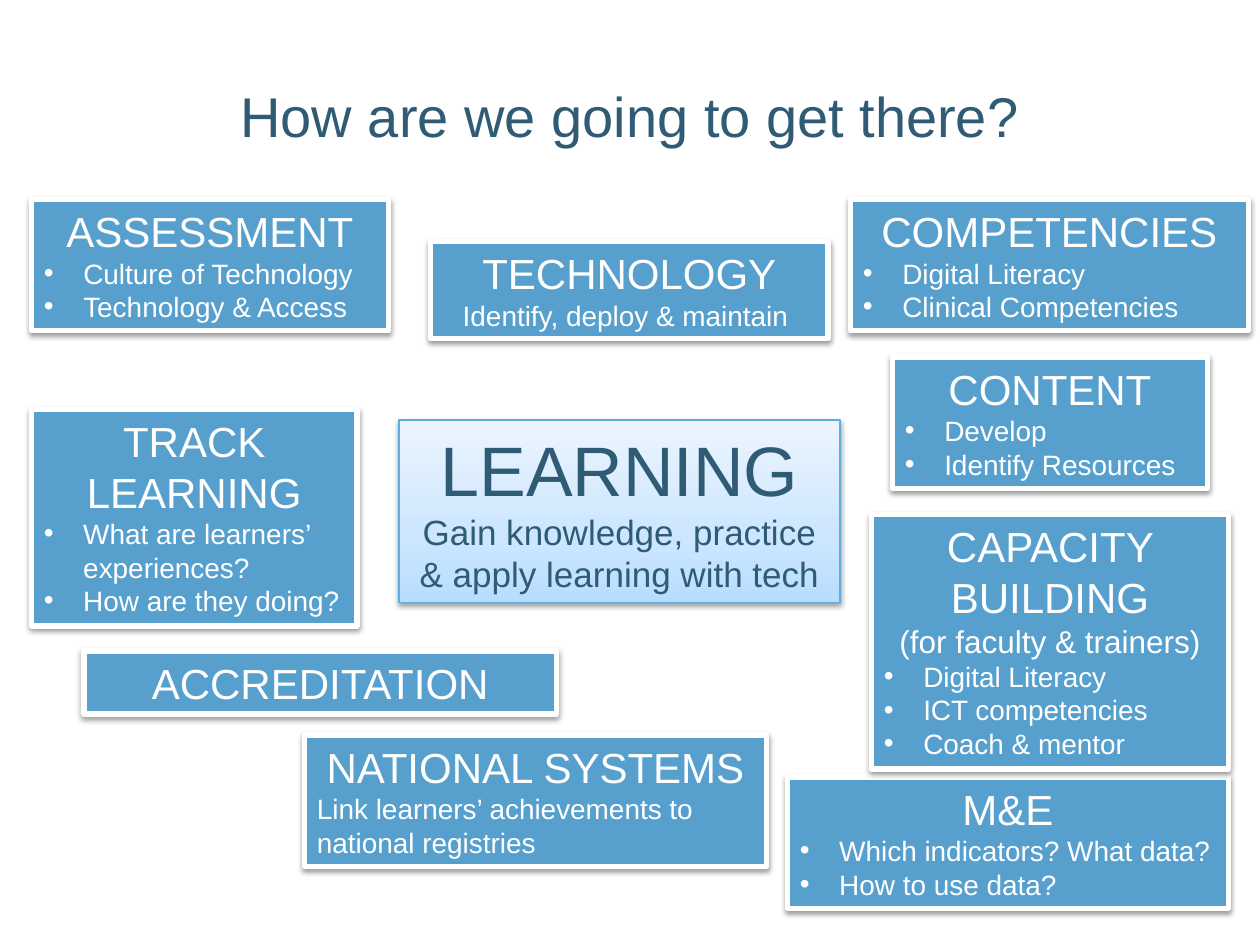
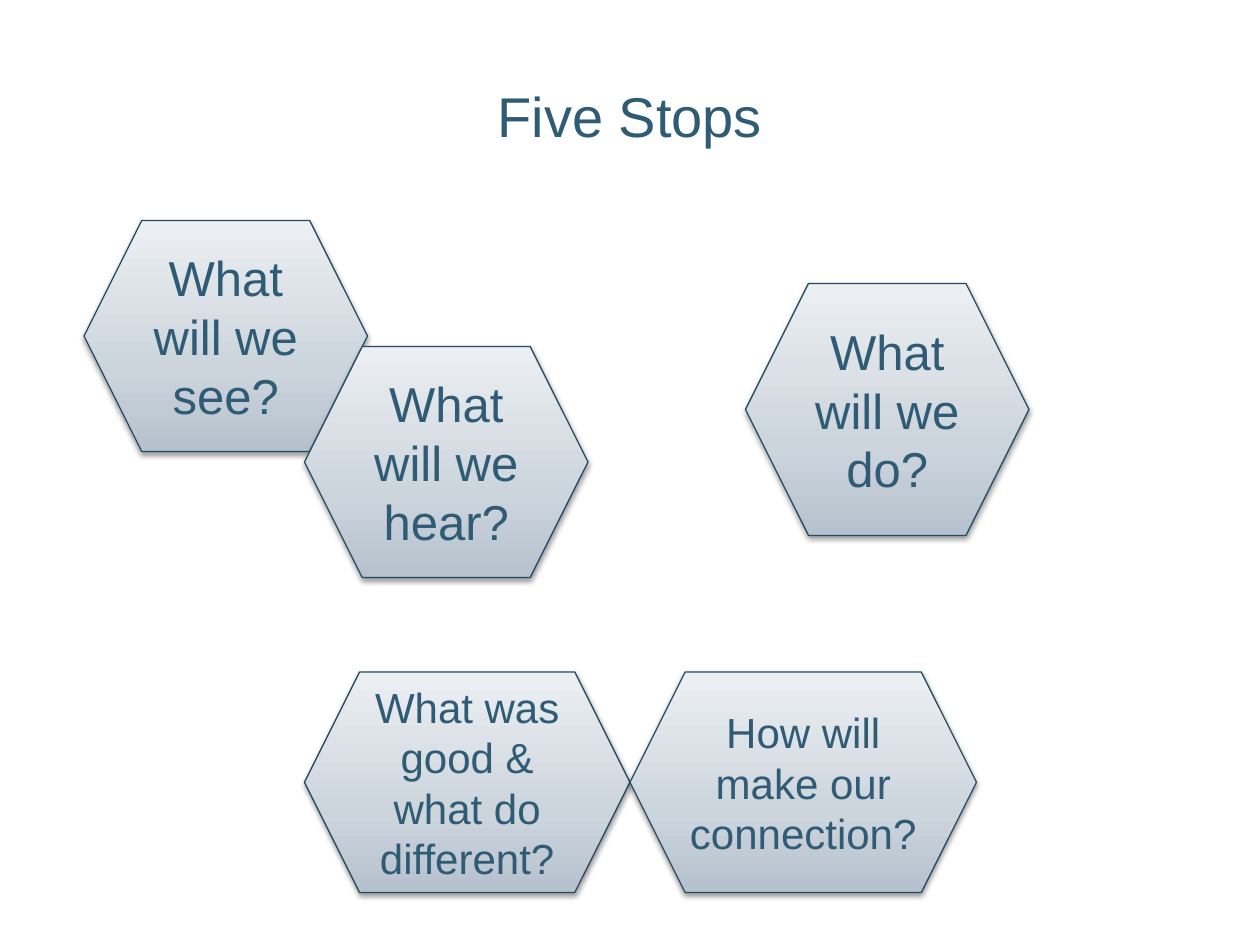
"""Build two slides: a map of learning parts and five stops."""
from copy import deepcopy

from lxml.etree import SubElement
from pptx import Presentation
from pptx.dml.color import RGBColor
from pptx.enum.shapes import MSO_SHAPE
from pptx.enum.text import MSO_ANCHOR, MSO_AUTO_SIZE, PP_ALIGN
from pptx.oxml.ns import qn
from pptx.util import Pt

PX = 9525
FONT = "Arial"
NAVY = RGBColor(0x30, 0x5B, 0x75)
EDGE = RGBColor(0x25, 0x4B, 0x62)
BLUE = RGBColor(0x57, 0xA0, 0xCE)
SKY = RGBColor(0x5C, 0xAE, 0xE1)
WHITE = RGBColor(0xFF, 0xFF, 0xFF)
ICE = [RGBColor(0xB8, 0xDD, 0xFF), RGBColor(0xCC, 0xE6, 0xFF), RGBColor(0xEC, 0xF5, 0xFF)]
STEEL = [RGBColor(0xB6, 0xC1, 0xCE), RGBColor(0xCC, 0xD4, 0xDC), RGBColor(0xEC, 0xEF, 0xF2)]
STOPS = [0, 0.35, 1]
MID, LEFT = PP_ALIGN.CENTER, PP_ALIGN.LEFT


def add_block(slide, kind, place, fill, line, width):
    """Add a filled, outlined shape with a soft shadow; a list of colours is a gradient."""
    shape = slide.shapes.add_shape(kind, *[n * PX for n in place])
    props = shape._element.spPr
    if isinstance(fill, list):
        shape.fill.gradient()
        shape.fill.gradient_angle = 90
        stops = props.find(".//" + qn("a:gsLst"))
        stops.append(deepcopy(stops[0]))
        for stop, spot, tint in zip(shape.fill.gradient_stops, STOPS, fill):
            stop.position = spot
            stop.color.rgb = tint
    else:
        shape.fill.solid()
        shape.fill.fore_color.rgb = fill
    shape.line.color.rgb = line
    shape.line.width = Pt(width)
    shape.shadow.inherit = False
    shade = SubElement(props.find(qn("a:effectLst")), qn("a:outerShdw"),
                       blurRad="40000", dist="20000", dir="5400000", rotWithShape="0")
    black = SubElement(shade, qn("a:srgbClr"), val="000000")
    SubElement(black, qn("a:alpha"), val="38000")
    return shape


def write(frame, lines, tint):
    """Fill a frame with (text, size, alignment) lines; plain strings become bullets."""
    for i, item in enumerate(lines):
        para = frame.paragraphs[0] if i == 0 else frame.add_paragraph()
        text, size, align = (item, 16, LEFT) if isinstance(item, str) else item
        para.text = text
        para.alignment = align
        if isinstance(item, str):
            props = para._p.get_or_add_pPr()
            props.set("marL", str(30 * PX))
            props.set("indent", str(-30 * PX))
            SubElement(props, qn("a:buFont"), typeface=FONT)
            SubElement(props, qn("a:buChar"), char="•")
        para.font.name = FONT
        para.font.size = Pt(size)
        para.font.color.rgb = tint


deck = Presentation()
deck.slide_width, deck.slide_height = 960 * PX, 720 * PX

pages = []
for name in ["How are we going to get there?", "Five Stops"]:
    slide = deck.slides.add_slide(deck.slide_layouts[5])
    title = slide.shapes.title
    title.left, title.top, title.width, title.height = [n * PX for n in (48, 40, 864, 96)]
    title.text_frame.vertical_anchor = MSO_ANCHOR.MIDDLE
    write(title.text_frame, [(name, 32, MID)], NAVY)
    pages.append(slide)
plan, tour = pages

topics = [
    ((24, 152, 272, 100), "ASSESSMENT", ["Culture of Technology", "Technology & Access"]),
    ((64, 496, 360, 48), "ACCREDITATION", []),
    ((600, 592, 336, 100), "M&E", ["Which indicators? What data?", "How to use data?"]),
    ((232, 560, 352, 100), "NATIONAL SYSTEMS",
     [("Link learners’ achievements to national registries", 16, LEFT)]),
    ((24, 312, 248, 165), "TRACK LEARNING",
     ["What are learners’ experiences?", "How are they doing?"]),
    ((664, 392, 272, 194), "CAPACITY BUILDING",
     [("(for faculty & trainers)", 18, MID),
      "Digital Literacy", "ICT competencies", "Coach & mentor"]),
    ((304, 320, 336, 139), "LEARNING",
     [("Gain knowledge, practice & apply learning with tech", 20, MID)]),
    ((680, 272, 240, 100), "CONTENT", ["Develop", "Identify Resources"]),
    ((648, 152, 303, 100), "COMPETENCIES", ["Digital Literacy", "Clinical Competencies"]),
    ((328, 184, 303, 74), "TECHNOLOGY", [("Identify, deploy & maintain ", 16, MID)]),
]
for place, head, lines in topics:
    core = head == "LEARNING"
    fill, line, width = (ICE, SKY, 0.75) if core else (BLUE, WHITE, 3)
    box = add_block(plan, MSO_SHAPE.RECTANGLE, place, fill, line, width)
    frame = box.text_frame
    frame.vertical_anchor = MSO_ANCHOR.TOP
    frame.auto_size = MSO_AUTO_SIZE.SHAPE_TO_FIT_TEXT
    write(frame, [(head, 40 if core else 24, MID)] + lines, NAVY if core else WHITE)

asks = [
    ((64, 168, 216, 176), "What will we see?", 28),
    ((232, 512, 248, 168), "What was good & what do different?", 24),
    ((568, 216, 216, 192), "What will we do?", 28),
    ((480, 512, 264, 168), "How will make our connection?", 24),
    ((232, 264, 216, 176), "What will we hear?", 28),
]
for place, text, size in asks:
    cell = add_block(tour, MSO_SHAPE.HEXAGON, place, STEEL, EDGE, 0.75)
    cell.text_frame.vertical_anchor = MSO_ANCHOR.MIDDLE
    write(cell.text_frame, [(text, size, MID)], NAVY)

deck.save("out.pptx")
